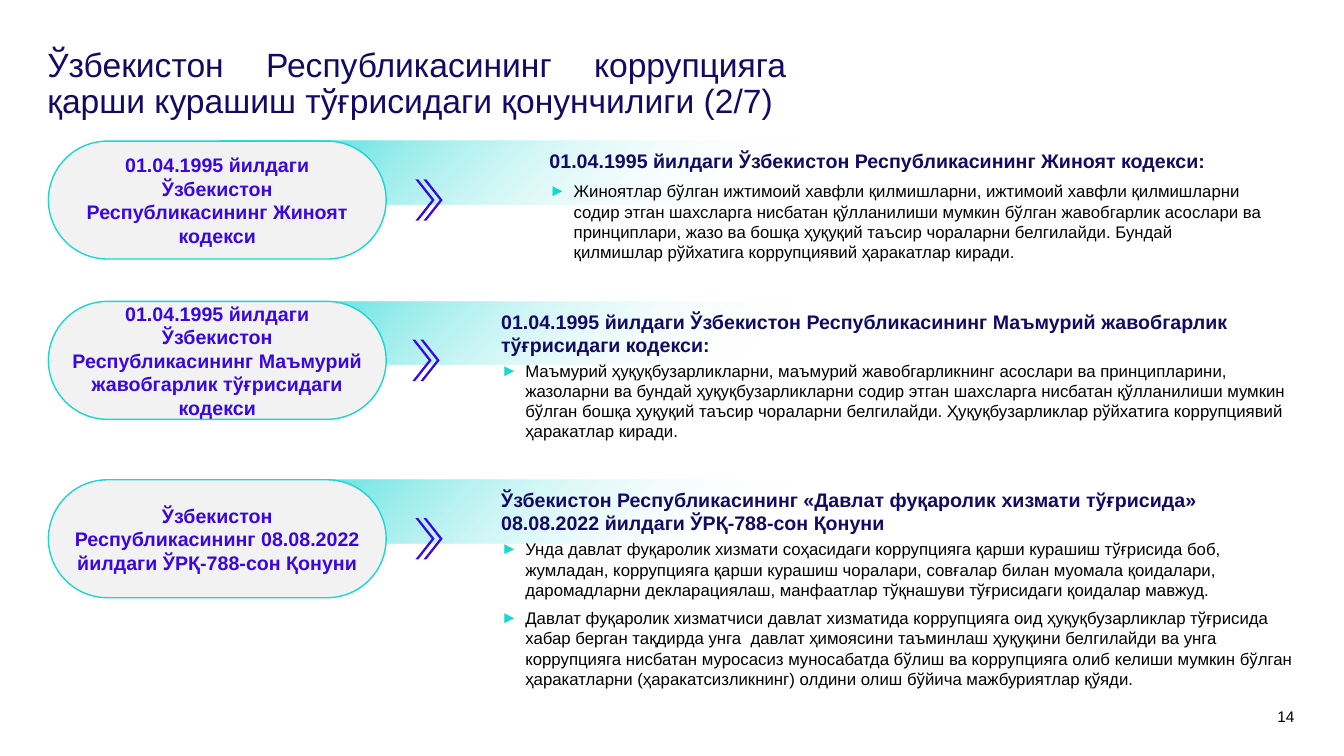
from lxml import etree
from pptx import Presentation
from pptx.dml.color import RGBColor
from pptx.enum.shapes import MSO_SHAPE
from pptx.enum.text import MSO_ANCHOR, PP_ALIGN
from pptx.oxml.ns import qn
from pptx.util import Emu, Pt

RECTANGLE = MSO_SHAPE.RECTANGLE
ROUNDED = MSO_SHAPE.ROUNDED_RECTANGLE
CHEVRON = MSO_SHAPE.CHEVRON
TOP, MIDDLE = MSO_ANCHOR.TOP, MSO_ANCHOR.MIDDLE
LEFT, CENTER = PP_ALIGN.LEFT, PP_ALIGN.CENTER
RIGHT, JUSTIFY = PP_ALIGN.RIGHT, PP_ALIGN.JUSTIFY

PX = 9144
FONT = "Arial"
NAVY, VIOLET, TEAL = "130A65", "3A07DF", "1BD7D3"
GREY, WHITE, BLACK = "F2F2F2", "FFFFFF", "000000"

ROWS = [
    {
        "top": 140, "chevron_left": 412, "body": (545, 710, 121), "heading_after": 6,
        "label": "01.04.1995 йилдаги Ўзбекистон Республикасининг Жиноят кодекси",
        "heading": "01.04.1995 йилдаги Ўзбекистон Республикасининг Жиноят кодекси:",
        "points": [
            "Жиноятлар бўлган ижтимоий хавфли қилмишларни, ижтимоий хавфли қилмишларни "
            "содир этган шахсларга нисбатан қўлланилиши мумкин бўлган жавобгарлик асослари ва "
            "принциплари, жазо ва бошқа ҳуқуқий таъсир чораларни белгилайди. Бундай "
            "қилмишлар рўйхатига коррупциявий ҳаракатлар киради.",
        ],
    },
    {
        "top": 299, "chevron_left": 409, "body": (497, 788, 140), "heading_after": 3,
        "label": "01.04.1995 йилдаги Ўзбекистон Республикасининг Маъмурий "
                 "жавобгарлик тўғрисидаги кодекси",
        "heading": "01.04.1995 йилдаги Ўзбекистон Республикасининг Маъмурий "
                   "жавобгарлик тўғрисидаги кодекси:",
        "points": [
            "Маъмурий ҳуқуқбузарликларни, маъмурий жавобгарликнинг асослари ва принципларини, "
            "жазоларни ва бундай ҳуқуқбузарликларни содир этган шахсларга нисбатан қўлланилиши "
            "мумкин бўлган бошқа ҳуқуқий таъсир чораларни белгилайди. Ҳуқуқбузарликлар "
            "рўйхатига коррупциявий ҳаракатлар киради.",
        ],
    },
    {
        "top": 476, "chevron_left": 412, "body": (497, 788, 240), "heading_after": 3,
        "label": "Ўзбекистон Республикасининг 08.08.2022 йилдаги ЎРҚ-788-сон Қонуни",
        "heading": "Ўзбекистон Республикасининг «Давлат фуқаролик хизмати тўғрисида» "
                   "08.08.2022 йилдаги ЎРҚ-788-сон Қонуни",
        "points": [
            "Унда давлат фуқаролик хизмати соҳасидаги коррупцияга қарши курашиш тўғрисида боб, "
            "жумладан, коррупцияга қарши курашиш чоралари, совғалар билан муомала қоидалари, "
            "даромадларни декларациялаш, манфаатлар тўқнашуви тўғрисидаги қоидалар мавжуд.",
            "Давлат фуқаролик хизматчиси давлат хизматида коррупцияга оид ҳуқуқбузарликлар "
            "тўғрисида хабар берган тақдирда унга  давлат ҳимоясини таъминлаш ҳуқуқини "
            "белгилайди ва унга коррупцияга нисбатан муросасиз муносабатда бўлиш ва "
            "коррупцияга олиб келиши мумкин бўлган ҳаракатларни (ҳаракатсизликнинг) олдини "
            "олиш бўйича мажбуриятлар қўяди.",
        ],
    },
]


def px(value):
    return Emu(value * PX)


def color(hex_value):
    return RGBColor.from_string(hex_value)


def add_bullet(paragraph):
    properties = paragraph._p.get_or_add_pPr()
    properties.set("marL", str(px(24)))
    properties.set("indent", str(px(-24)))
    bullet_color = etree.SubElement(properties, qn("a:buClr"))
    etree.SubElement(bullet_color, qn("a:srgbClr"), val=TEAL)
    etree.SubElement(properties, qn("a:buFont"), typeface=FONT)
    etree.SubElement(properties, qn("a:buChar"), char="►")


def write(paragraph, text, size=12, ink=BLACK, bold=False, align=LEFT,
          after=0, line_spacing=None, bullet=False):
    if bullet:
        add_bullet(paragraph)
    paragraph.alignment = align
    paragraph.space_after = Pt(after)
    if line_spacing:
        paragraph.line_spacing = line_spacing
    run = paragraph.add_run()
    run.text = text
    run.font.name = FONT
    run.font.size = Pt(size)
    run.font.bold = bold
    run.font.color.rgb = color(ink)


class LawSlide:
    def __init__(self, presentation):
        self.slide = presentation.slides.add_slide(presentation.slide_layouts[6])

    def frame(self, shape, insets, anchor):
        text_frame = shape.text_frame
        text_frame.word_wrap = True
        text_frame.vertical_anchor = anchor
        (text_frame.margin_left, text_frame.margin_top,
         text_frame.margin_right, text_frame.margin_bottom) = map(px, insets)
        return text_frame

    def text_box(self, left, top, width, height, inset_top=0):
        box = self.slide.shapes.add_textbox(px(left), px(top), px(width), px(height))
        return self.frame(box, (0, inset_top, 0, 0), TOP)

    def shape(self, kind, left, top, width, height, fill=None, line=None, adjustment=None):
        shape = self.slide.shapes.add_shape(kind, px(left), px(top), px(width), px(height))
        shape.shadow.inherit = False
        if fill:
            shape.fill.solid()
            shape.fill.fore_color.rgb = color(fill)
        if line:
            shape.line.color.rgb = color(line)
            shape.line.width = Pt(1)
        else:
            shape.line.fill.background()
        if adjustment:
            shape.adjustments[0] = adjustment
        return shape

    def band(self, top):
        band = self.shape(RECTANGLE, 218, top, 1067, 63)
        band.fill.gradient()
        band.fill.gradient_angle = 135
        stops = band.fill.gradient_stops
        for stop, position, tint in zip(stops, (0.49, 1), (WHITE, TEAL)):
            stop.position = position
            stop.color.rgb = color(tint)
        clear_color = band._element.spPr.find(".//" + qn("a:srgbClr"))
        etree.SubElement(clear_color, qn("a:alpha"), val="0")

    def pill(self, top, label):
        pill = self.shape(ROUNDED, 48, top, 335, 117, GREY, TEAL, 0.5)
        text_frame = self.frame(pill, (5, 5, 5, 5), MIDDLE)
        write(text_frame.paragraphs[0], label, size=14, ink=VIOLET, bold=True, align=CENTER)

    def double_chevron(self, left, top):
        for offset in (0, 8):
            self.shape(CHEVRON, left + offset, top, 19, 41, VIOLET, adjustment=0.85)

    def body(self, left, top, width, height, heading, heading_after, points):
        text_frame = self.text_box(left, top, width, height, inset_top=8)
        write(text_frame.paragraphs[0], heading, size=14, ink=NAVY, bold=True,
              after=heading_after)
        for point in points:
            write(text_frame.add_paragraph(), point, after=6, bullet=True)

    def row(self, top, chevron_left, body, heading_after, label, heading, points):
        left, width, height = body
        self.band(top)
        self.pill(top, label)
        self.double_chevron(chevron_left, top + 38)
        self.body(left, top, width, height, heading, heading_after, points)


def main():
    presentation = Presentation()
    presentation.slide_width = px(1333)
    presentation.slide_height = px(750)
    law_slide = LawSlide(presentation)
    title = law_slide.text_box(47, 48, 733, 48)
    write(title.paragraphs[0],
          "Ўзбекистон Республикасининг коррупцияга қарши курашиш тўғрисидаги қонунчилиги (2/7)",
          size=24, ink=NAVY, align=JUSTIFY, line_spacing=0.9)
    for row in ROWS:
        law_slide.row(**row)
    page_number = law_slide.text_box(1241, 702, 43, 16)
    write(page_number.paragraphs[0], "14", size=11, align=RIGHT)
    presentation.save("out.pptx")


if __name__ == "__main__":
    main()
